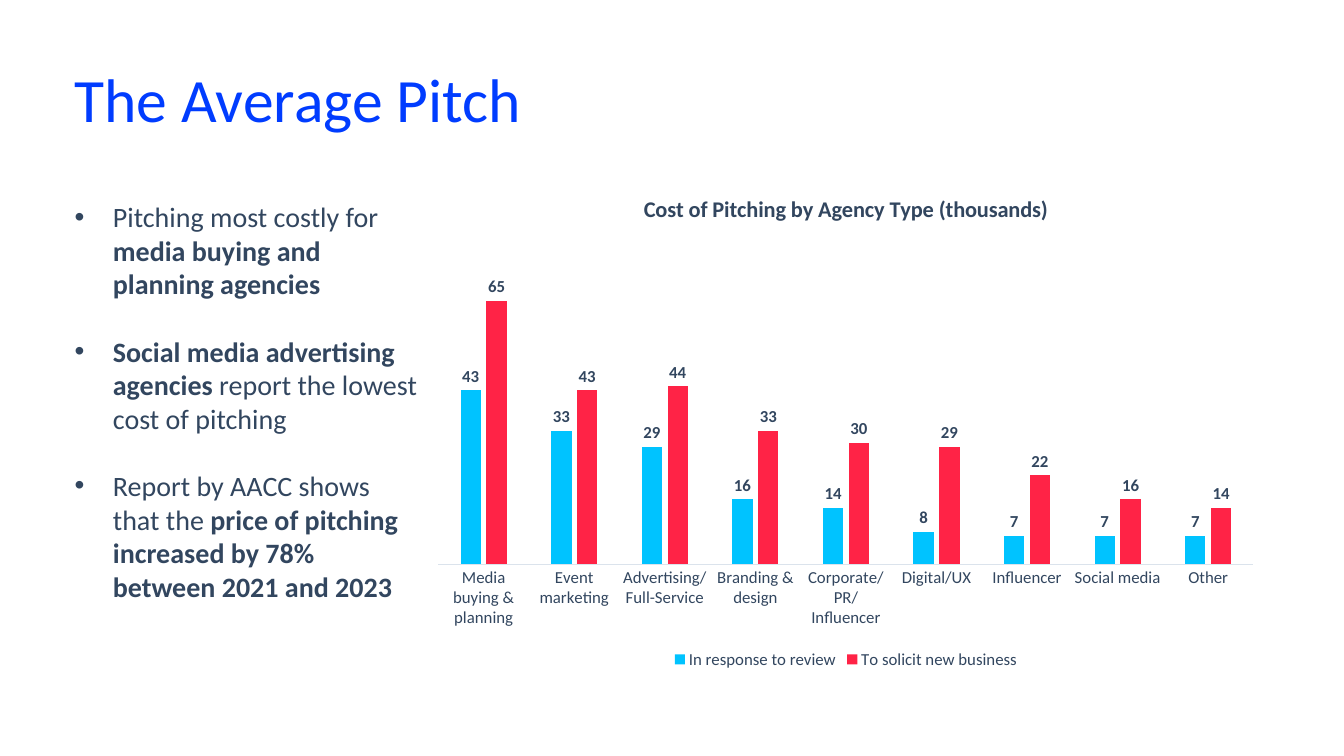
from lxml import etree
from pptx import Presentation
from pptx.chart.data import CategoryChartData
from pptx.dml.color import RGBColor
from pptx.enum.chart import (XL_CHART_TYPE, XL_LABEL_POSITION,
                             XL_LEGEND_POSITION, XL_TICK_MARK)
from pptx.enum.text import MSO_ANCHOR, MSO_AUTO_SIZE, PP_ALIGN
from pptx.oxml.ns import qn
from pptx.util import Inches, Pt

COLUMN = XL_CHART_TYPE.COLUMN_CLUSTERED
OUTSIDE = XL_LABEL_POSITION.OUTSIDE_END
BOTTOM = XL_LEGEND_POSITION.BOTTOM
NO_TICK = XL_TICK_MARK.NONE
TOP = MSO_ANCHOR.TOP
NO_FIT = MSO_AUTO_SIZE.NONE
LEFT = PP_ALIGN.LEFT

WIDTH, HEIGHT = Inches(13.33), Inches(7.5)
FACE = "Calibri"
COLORS = {"title": "003CFF", "text": "32465F", "axis": "DBE3EC",
          "review": "00C3FF", "solicit": "FF2346"}

TITLE = "The Average Pitch"
# Each point is a list of (text, bold) runs.
POINTS = [
    [("Pitching most costly for ", False),
     ("media buying and planning agencies", True)],
    [("Social media advertising agencies ", True),
     ("report the lowest cost of pitching", False)],
    [("Report by AACC shows that the ", False),
     ("price of pitching increased by 78% between 2021 and 2023", True)],
]
HEADING = "Cost of Pitching by Agency Type (thousands)"
AGENCIES = ["Media buying & planning", "Event marketing",
            "Advertising/Full-Service", "Branding & design",
            "Corporate/PR/Influencer", "Digital/UX", "Influencer",
            "Social media", "Other"]
COSTS = [
    ("In response to review", "review", [43, 33, 29, 16, 14, 8, 7, 7, 7]),
    ("To solicit new business", "solicit",
     [65, 43, 44, 33, 30, 29, 22, 16, 14]),
]


def share(left, top, width, height):
    """Turn percentages of the slide into a box in EMU."""
    return (int(WIDTH * left / 100), int(HEIGHT * top / 100),
            int(WIDTH * width / 100), int(HEIGHT * height / 100))


def style(font, size, color="text", bold=False):
    font.name = FACE
    font.size = Pt(size)
    font.bold = bold
    font.color.rgb = RGBColor.from_string(COLORS[color])


def set_frame(frame):
    frame.margin_left = frame.margin_right = 0
    frame.margin_top = frame.margin_bottom = 0
    frame.word_wrap = True
    frame.auto_size = NO_FIT
    frame.vertical_anchor = TOP


def add_title(slide, box):
    title = slide.shapes.title
    title.left, title.top, title.width, title.height = box
    set_frame(title.text_frame)
    title.text_frame.text = TITLE
    para = title.text_frame.paragraphs[0]
    para.alignment = LEFT
    para.line_spacing = 0.85
    style(para.font, 44, "title")


def add_bullet(para):
    props = para._p.get_or_add_pPr()
    indent = Inches(0.38)
    props.set("marL", str(indent))
    props.set("indent", str(-indent))
    etree.SubElement(props, qn("a:buFont")).set("typeface", "Arial")
    etree.SubElement(props, qn("a:buChar")).set("char", "•")


def add_points(slide, box):
    frame = slide.shapes.add_textbox(*box).text_frame
    set_frame(frame)
    for index, runs in enumerate(POINTS):
        para = frame.add_paragraph() if index else frame.paragraphs[0]
        add_bullet(para)
        if index:
            para.space_before = Pt(24)
        style(para.font, 20)
        for text, bold in runs:
            run = para.add_run()
            run.text = text
            run.font.bold = bold


def add_costs(slide, box):
    data = CategoryChartData()
    data.categories = AGENCIES
    for name, _, values in COSTS:
        data.add_series(name, values)
    chart = slide.shapes.add_chart(COLUMN, *box, data).chart
    style(chart.font, 12)

    chart.has_title = True
    heading = chart.chart_title.text_frame
    heading.text = HEADING
    style(heading.paragraphs[0].font, 16, bold=True)
    chart.chart_title.include_in_layout = False

    chart.has_legend = True
    chart.legend.position = BOTTOM
    chart.legend.include_in_layout = False
    style(chart.legend.font, 12)

    axis = chart.category_axis
    axis.major_tick_mark = axis.minor_tick_mark = NO_TICK
    style(axis.tick_labels.font, 12)
    axis.format.line.color.rgb = RGBColor.from_string(COLORS["axis"])
    axis.format.line.width = Pt(0.75)

    scale = chart.value_axis
    scale.minimum_scale, scale.maximum_scale = 0, 80
    scale.has_major_gridlines = False
    scale.visible = False

    plot = chart.plots[0]
    plot.gap_width, plot.overlap = 219, -27
    plot.vary_by_categories = False
    for series, (_, color, _) in zip(plot.series, COSTS):
        fill = series.format.fill
        fill.solid()
        fill.fore_color.rgb = RGBColor.from_string(COLORS[color])
        labels = series.data_labels
        labels.show_value = True
        labels.position = OUTSIDE
        style(labels.font, 12, bold=True)


def main():
    deck = Presentation()
    deck.slide_width, deck.slide_height = WIDTH, HEIGHT
    slide = deck.slides.add_slide(deck.slide_layouts[5])
    add_costs(slide, share(31.36, 23.07, 63.17, 66))
    add_title(slide, share(5.55, 9.6, 79.9, 16.8))
    add_points(slide, share(5.55, 26.4, 25.81, 62.8))
    deck.save("out.pptx")


if __name__ == "__main__":
    main()
